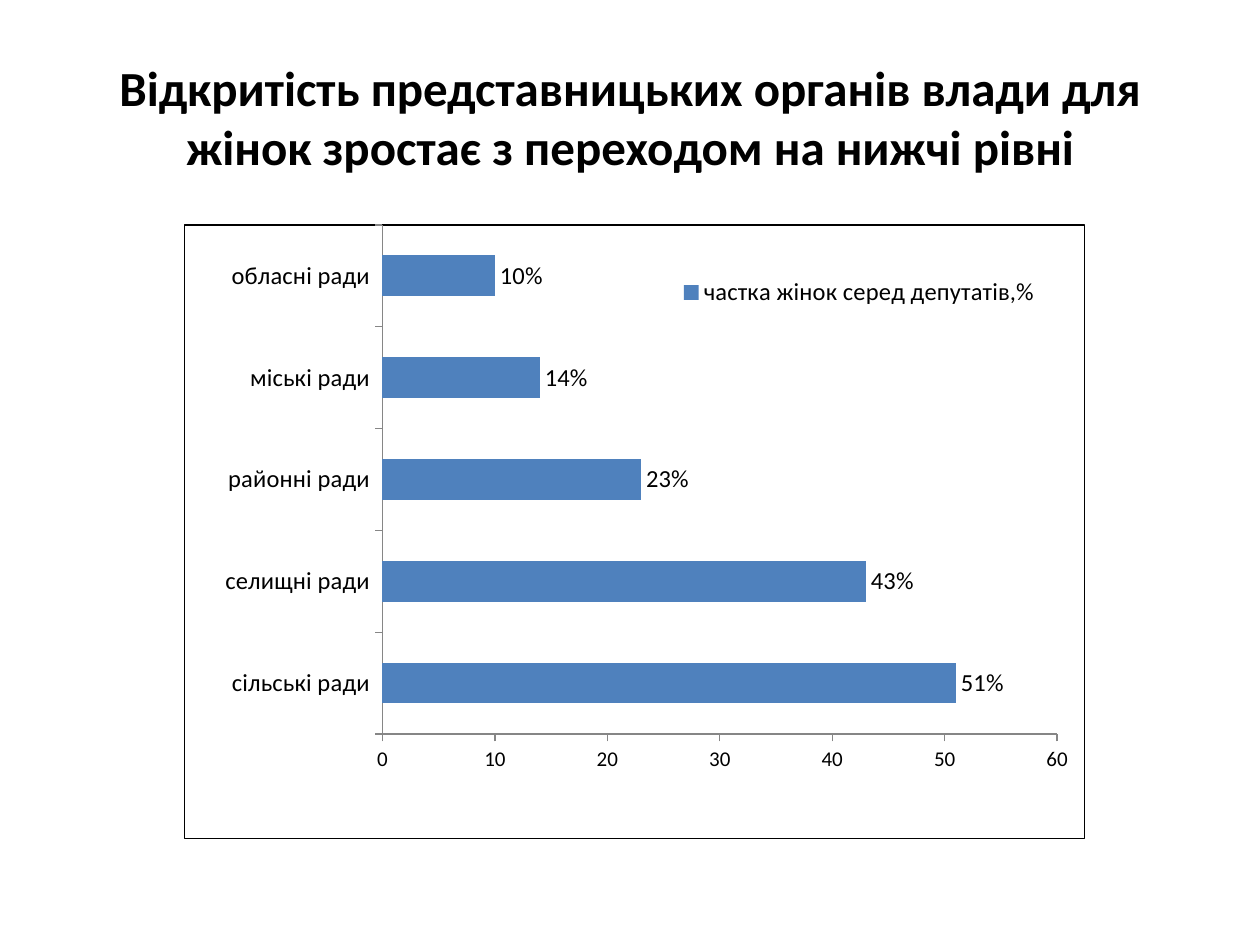
from lxml import etree
from pptx import Presentation
from pptx.chart.data import CategoryChartData
from pptx.dml.color import RGBColor
from pptx.enum.chart import XL_CHART_TYPE as ChartType
from pptx.enum.chart import XL_LABEL_POSITION as LabelPosition
from pptx.enum.chart import XL_LEGEND_POSITION as LegendPosition
from pptx.enum.chart import XL_TICK_MARK as TickMark
from pptx.enum.text import MSO_ANCHOR as Anchor
from pptx.enum.text import PP_ALIGN as Align
from pptx.oxml import parse_xml
from pptx.oxml.ns import nsdecls, qn
from pptx.util import Inches, Pt

TITLE = "Відкритість представницьких органів влади для жінок зростає з переходом на нижчі рівні"
SERIES_NAME = "частка жінок серед депутатів,%"
SHARES = [
    ("сільські ради", 51),
    ("селищні ради", 43),
    ("районні ради", 23),
    ("міські ради", 14),
    ("обласні ради", 10),
]

FONT = "Calibri"
BLACK = RGBColor(0, 0, 0)
BLUE = RGBColor(0x4F, 0x81, 0xBD)
GRAY = RGBColor(0x86, 0x86, 0x86)
TITLE_AREA = (0.5, 0.3, 9, 1.25)
CHART_AREA = (1.46, 1.78, 7.15, 4.88)
PLOT_SHARES = {"x": 0.22, "y": 0, "w": 0.75, "h": 0.83}
LEGEND_SHARES = {"x": 0.54, "y": 0.07, "w": 0.42, "h": 0.08}


def style_font(font, size, bold=False):
    font.name = FONT
    font.size = Pt(size)
    font.bold = bold
    font.color.rgb = BLACK


def manual_layout(shares, inner=False):
    layout = etree.Element(qn("c:layout"))
    manual = etree.SubElement(layout, qn("c:manualLayout"))
    if inner:
        etree.SubElement(manual, qn("c:layoutTarget"), val="inner")
    for side in "xy":
        etree.SubElement(manual, qn(f"c:{side}Mode"), val="edge")
    for side, share in shares.items():
        etree.SubElement(manual, qn(f"c:{side}"), val=str(share))
    return layout


def replace_layout(parent, layout, after=None):
    for old in parent.findall(qn("c:layout")):
        parent.remove(old)
    if after is None:
        parent.insert(0, layout)
    else:
        after.addnext(layout)


def add_title(slide):
    box = slide.shapes.add_textbox(*map(Inches, TITLE_AREA))
    frame = box.text_frame
    frame.word_wrap = True
    frame.vertical_anchor = Anchor.MIDDLE
    para = frame.paragraphs[0]
    para.text = TITLE
    para.alignment = Align.CENTER
    style_font(para.font, 28, bold=True)


def add_share_chart(slide):
    data = CategoryChartData(number_format='0"%"')
    data.categories = [council for council, share in SHARES]
    data.add_series(SERIES_NAME, [share for council, share in SHARES])
    chart = slide.shapes.add_chart(
        ChartType.BAR_CLUSTERED, *map(Inches, CHART_AREA), data
    ).chart
    style_font(chart.font, 12)
    chart.has_title = False

    for axis, size in ((chart.category_axis, 14), (chart.value_axis, 12)):
        axis.has_major_gridlines = False
        axis.major_tick_mark = TickMark.OUTSIDE
        axis.minor_tick_mark = TickMark.NONE
        axis.format.line.color.rgb = GRAY
        style_font(axis.tick_labels.font, size)
    scale = chart.value_axis
    scale.minimum_scale, scale.maximum_scale, scale.major_unit = 0, 60, 10
    scale.tick_labels.number_format = "0"
    scale.tick_labels.number_format_is_linked = False

    plot = chart.plots[0]
    plot.gap_width = 150
    plot.vary_by_categories = False
    bars = plot.series[0]
    bars.format.fill.solid()
    bars.format.fill.fore_color.rgb = BLUE
    labels = bars.data_labels
    labels.show_value = True
    labels.number_format = '0"%"'
    labels.number_format_is_linked = False
    labels.position = LabelPosition.OUTSIDE_END
    style_font(labels.font, 14)

    chart.has_legend = True
    legend = chart.legend
    legend.position = LegendPosition.RIGHT
    legend.include_in_layout = True
    style_font(legend.font, 14)

    root = chart.element
    legend_xml = root.find(".//" + qn("c:legend"))
    replace_layout(
        legend_xml, manual_layout(LEGEND_SHARES), legend_xml.find(qn("c:legendPos"))
    )
    plot_area = root.find(".//" + qn("c:plotArea"))
    replace_layout(plot_area, manual_layout(PLOT_SHARES, inner=True))
    border = parse_xml(
        f'<c:spPr {nsdecls("c", "a")}><a:noFill/><a:ln w="{Pt(0.75)}"><a:solidFill>'
        f'<a:srgbClr val="{BLACK}"/></a:solidFill></a:ln></c:spPr>'
    )
    root.find(qn("c:chart")).addnext(border)


def main():
    deck = Presentation()
    deck.slide_width, deck.slide_height = Inches(10), Inches(7.5)
    slide = deck.slides.add_slide(deck.slide_layouts[6])
    add_title(slide)
    add_share_chart(slide)
    deck.save("out.pptx")


if __name__ == "__main__":
    main()
